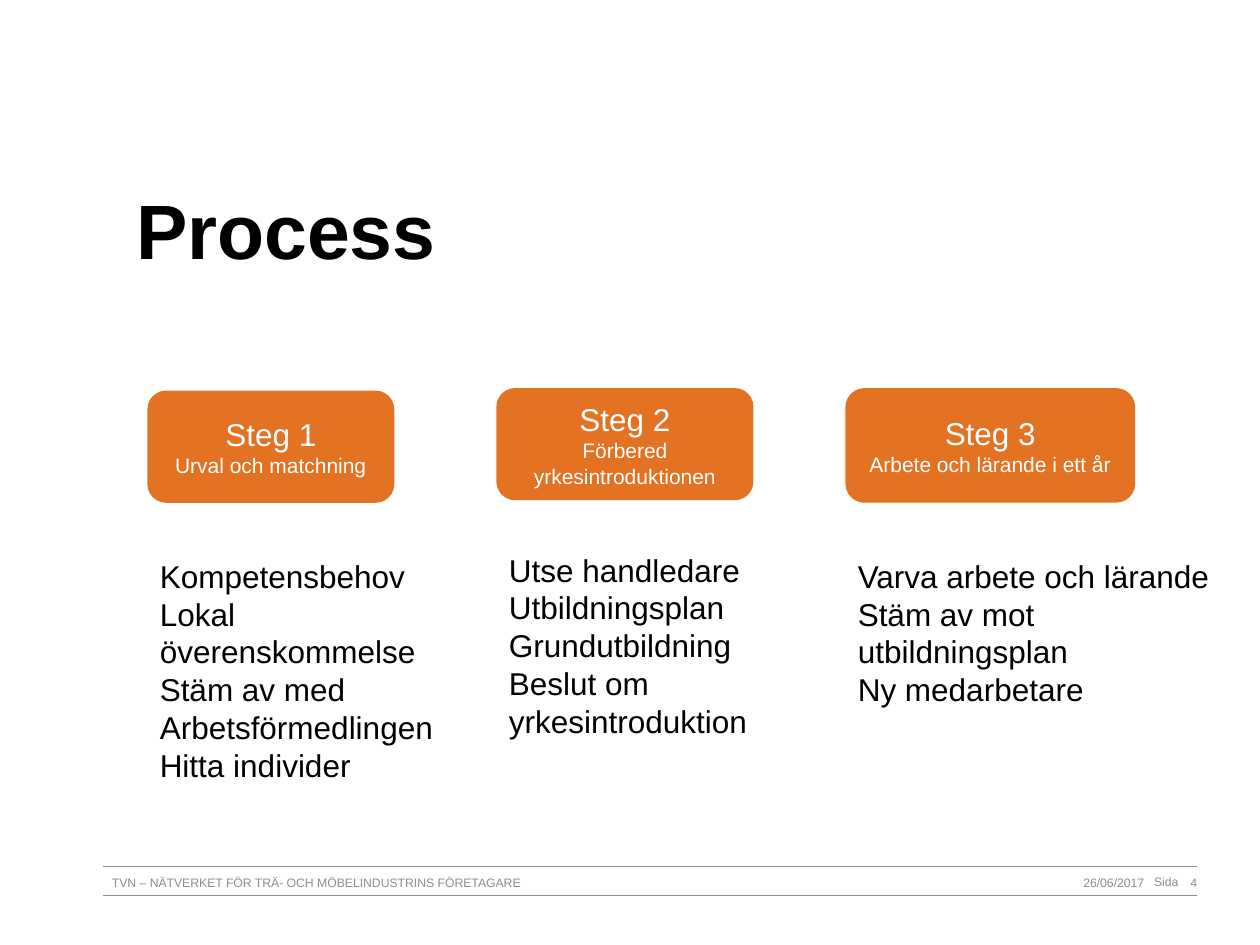
from pptx import Presentation
from pptx.dml.color import RGBColor
from pptx.enum.shapes import MSO_CONNECTOR, MSO_SHAPE
from pptx.enum.text import MSO_ANCHOR, PP_ALIGN
from pptx.oxml.ns import qn
from pptx.util import Inches, Pt
from lxml import etree

LEFT, CENTER, RIGHT = PP_ALIGN.LEFT, PP_ALIGN.CENTER, PP_ALIGN.RIGHT
TOP, MIDDLE, BOTTOM = MSO_ANCHOR.TOP, MSO_ANCHOR.MIDDLE, MSO_ANCHOR.BOTTOM
STRAIGHT = MSO_CONNECTOR.STRAIGHT
ROUNDED = MSO_SHAPE.ROUNDED_RECTANGLE

BLACK = RGBColor(0x00, 0x00, 0x00)
WHITE = RGBColor(0xFF, 0xFF, 0xFF)
ORANGE = RGBColor(0xE3, 0x72, 0x22)
GRAY = RGBColor(0x8B, 0x8D, 0x8E)
FONT = "Arial"

COLUMN_LEFT, COLUMN_PITCH = 1.17, 2.77
STEPS = [
    ("Steg 1", "Urval och matchning",
     ["Kompetensbehov", "Lokal överenskommelse\vStäm av med Arbetsförmedlingen",
      "Hitta individer"],
     (3.1, 1.96, 0.89), (4.37, 2.6, 1.92), True),
    ("Steg 2", "Förbered yrkesintroduktionen",
     ["Utse handledare", "Utbildningsplan\vGrundutbildning",
      "Beslut om \vyrkesintroduktion"],
     (3.08, 2.04, 0.89), (4.32, 2.12, 1.62), True),
    ("Steg 3", "Arbete och lärande i ett år",
     ["Varva arbete och lärande", "Stäm av mot \vutbildningsplan",
      "Ny medarbetare"],
     (3.08, 2.3, 0.91), (4.37, 3.03, 1.31), False),
]


def inches(*lengths):
    return [Inches(length) for length in lengths]


def write(shape, lines, sizes, color, align=LEFT, anchor=TOP, wrap=True):
    frame = shape.text_frame
    frame.word_wrap = wrap
    frame.vertical_anchor = anchor
    for index, (line, size) in enumerate(zip(lines, sizes)):
        para = frame.paragraphs[0] if index == 0 else frame.add_paragraph()
        para.text = line
        para.alignment = align
        para.font.name = FONT
        para.font.size = Pt(size)
        para.font.color.rgb = color
    return frame


def clear_insets(frame):
    frame.margin_left = frame.margin_right = 0
    frame.margin_top = frame.margin_bottom = 0


def add_title(page, text, left, top, width, height):
    title = page.shapes.title
    title.left, title.top, title.width, title.height = inches(left, top, width, height)
    frame = write(title, [text], [44], BLACK, anchor=BOTTOM)
    clear_insets(frame)
    frame.paragraphs[0].font.bold = True
    frame.paragraphs[0].line_spacing = Pt(48)


def add_step(page, left, name, summary, tasks, header, body, wrap):
    card = page.shapes.add_shape(ROUNDED, *inches(left, *header))
    card.shadow.inherit = False
    card.fill.solid()
    card.fill.fore_color.rgb = ORANGE
    card.line.fill.background()
    write(card, [name, summary], [18, 12], WHITE, CENTER, MIDDLE)
    box = page.shapes.add_textbox(*inches(left, *body))
    write(box, tasks, [18] * len(tasks), BLACK, wrap=wrap)


def add_footer(page, left, top, width, height):
    right = left + width
    for level in (top, top + height):
        rule = page.shapes.add_connector(STRAIGHT, *inches(left, level, right, level))
        rule.line.color.rgb = GRAY
        rule.line.width = Pt(0.5)
        etree.SubElement(rule._element.spPr, qn("a:effectLst"))
    parts = [
        ("TVN – NÄTVERKET FÖR TRÄ- OCH MÖBELINDUSTRINS FÖRETAGARE", -0.03, 5.87, LEFT),
        ("26/06/2017", 6.03, 2.33, RIGHT),
        ("4", 8.39, 0.39, RIGHT),
    ]
    for text, offset, span, align in parts:
        box = page.shapes.add_textbox(*inches(left + offset, top + 0.03, span, 0.19))
        write(box, [text], [7], GRAY, align, MIDDLE)
    label = page.shapes.add_textbox(*inches(left + 8.34, top + 0.04, 0.24, 0.16))
    clear_insets(write(label, ["Sida"], [7], GRAY, anchor=MIDDLE, wrap=False))


def main():
    deck = Presentation()
    deck.slide_width, deck.slide_height = inches(10, 7.5)
    page = deck.slides.add_slide(deck.slide_layouts[5])
    add_footer(page, 0.82, 6.88, 8.68, 0.23)
    add_title(page, "Process", 1.08, 0.93, 7.84, 1.25)
    for column, step in enumerate(STEPS):
        add_step(page, COLUMN_LEFT + column * COLUMN_PITCH, *step)
    deck.save("out.pptx")


if __name__ == "__main__":
    main()
